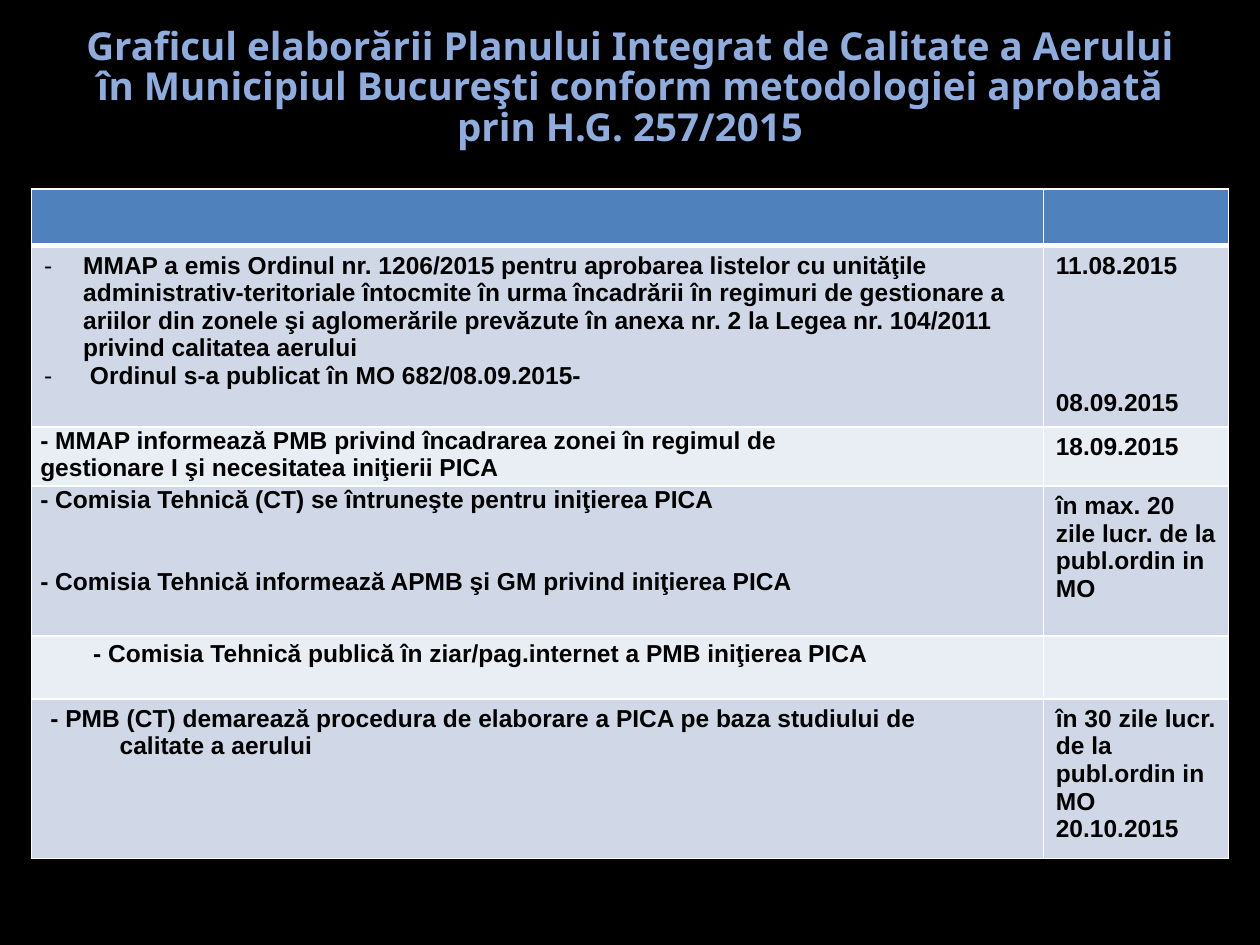
from dataclasses import dataclass

from lxml.etree import SubElement
from pptx import Presentation
from pptx.dml.color import RGBColor
from pptx.enum.text import MSO_ANCHOR, PP_ALIGN
from pptx.oxml.ns import qn
from pptx.util import Inches, Pt

BLACK = RGBColor(0x00, 0x00, 0x00)
WHITE = RGBColor(0xFF, 0xFF, 0xFF)
TITLE_BLUE = RGBColor(0x8F, 0xAC, 0xDE)
HEADER_BLUE = RGBColor(0x4F, 0x81, 0xBD)
BAND_DARK = RGBColor(0xD0, 0xD8, 0xE8)
BAND_LIGHT = RGBColor(0xE9, 0xED, 0xF4)

TITLE = ("Graficul elaborării Planului Integrat de Calitate a Aerului în Municipiul "
         "Bucureşti conform metodologiei aprobată prin H.G. 257/2015")
COLUMN_SHARES = (8.03 / 9.5, 1.47 / 9.5)


@dataclass
class Line:
    """One paragraph of a cell, with its indent in inches and gap in text lines."""
    text: str
    indent: float = 0
    gap: float = 0
    bullet: bool = False
    spacing: float = 1


@dataclass
class Step:
    """One row of the schedule."""
    height: float
    actions: tuple = ()
    deadline: tuple = ()
    tight: bool = False


SCHEDULE = (
    Step(0.45),
    Step(1.41,
         (Line("MMAP a emis Ordinul nr. 1206/2015 pentru aprobarea listelor cu unităţile "
               "administrativ-teritoriale întocmite în urma încadrării în regimuri de "
               "gestionare a ariilor din zonele şi aglomerările prevăzute în anexa nr. 2 "
               "la Legea nr. 104/2011 privind calitatea aerului", 0.31, bullet=True),
          Line(" Ordinul s-a publicat în MO 682/08.09.2015-", 0.31, bullet=True)),
         (Line("11.08.2015"), Line("08.09.2015", gap=4))),
    Step(0.44,
         (Line("- MMAP informează PMB privind încadrarea zonei în regimul de"),
          Line("gestionare I şi necesitatea iniţierii PICA")),
         (Line("18.09.2015"),), tight=True),
    Step(1.19,
         (Line("- Comisia Tehnică (CT) se întruneşte pentru iniţierea PICA"),
          Line("- Comisia Tehnică informează APMB şi GM privind iniţierea PICA", gap=2)),
         (Line("în max. 20 zile lucr. de la publ.ordin in MO"),), tight=True),
    Step(0.5,
         (Line("- Comisia Tehnică publică în ziar/pag.internet a PMB iniţierea PICA",
               0.42, spacing=1.15),), tight=True),
    Step(1.19,
         (Line("- PMB (CT) demarează procedura de elaborare a PICA pe baza studiului de", 0.05),
          Line("calitate a aerului", 0.6)),
         (Line("în 30 zile lucr. de la publ.ordin in MO 20.10.2015"),)),
)


class ScheduleSlide:
    """Holds the style and the current slide."""

    title_font, body_font = "Noto Sans", "Arial"
    title_size, body_size = 22, 14
    line_height = 15.7

    def __init__(self, deck):
        self.width, self.height = deck.slide_width, deck.slide_height
        self.slide = deck.slides.add_slide(deck.slide_layouts[6])
        backdrop = self.slide.background.fill
        backdrop.solid()
        backdrop.fore_color.rgb = BLACK

    def area(self, left, top, width, height):
        return (int(left * self.width), int(top * self.height),
                int(width * self.width), int(height * self.height))

    def style(self, paragraph, font, size, color):
        for run in paragraph.runs:
            run.font.name, run.font.size, run.font.bold = font, Pt(size), True
            run.font.color.rgb = color

    def title(self, text, *shares):
        frame = self.slide.shapes.add_textbox(*self.area(*shares)).text_frame
        frame.word_wrap = True
        frame.vertical_anchor = MSO_ANCHOR.MIDDLE
        frame.text = text
        heading = frame.paragraphs[0]
        heading.alignment = PP_ALIGN.CENTER
        heading.line_spacing = 0.88
        self.style(heading, self.title_font, self.title_size, TITLE_BLUE)

    def borders(self, cell, widths):
        properties = cell._tc.get_or_add_tcPr()
        for side, width in widths.items():
            edge = SubElement(properties, qn(f"a:ln{side}"), w=str(Pt(width)))
            paint = SubElement(edge, qn("a:solidFill"))
            SubElement(paint, qn("a:srgbClr"), val=str(WHITE))

    def paragraph(self, paragraph, line):
        paragraph.text = line.text
        paragraph.line_spacing = line.spacing
        paragraph.space_before = Pt(line.gap * self.line_height)
        properties = paragraph._p.get_or_add_pPr()
        properties.set("marL", str(Inches(line.indent)))
        properties.set("indent", str(Inches(-line.indent if line.bullet else 0)))
        if line.bullet:
            SubElement(properties, qn("a:buFont"), typeface=self.body_font)
            SubElement(properties, qn("a:buChar"), char="-")
        self.style(paragraph, self.body_font, self.body_size, BLACK)

    def cell(self, cell, lines, color, bottom):
        self.borders(cell, {"L": 1, "R": 1, "T": 1, "B": bottom})
        cell.fill.solid()
        cell.fill.fore_color.rgb = color
        frame = cell.text_frame
        for index, line in enumerate(lines):
            self.paragraph(frame.add_paragraph() if index else frame.paragraphs[0], line)

    def schedule(self, steps, left, top, width):
        total = sum(step.height for step in steps) / 7.5
        table = self.slide.shapes.add_table(
            len(steps), len(COLUMN_SHARES), *self.area(left, top, width, total)).table
        for column, share in zip(table.columns, COLUMN_SHARES):
            column.width = int(share * width * self.width)
        for number, step in enumerate(steps):
            table.rows[number].height = Inches(step.height)
            color = (BAND_DARK if number % 2 else BAND_LIGHT) if number else HEADER_BLUE
            for column, lines in enumerate((step.actions, step.deadline)):
                self.cell(table.cell(number, column), lines, color, 1 if number else 3)
            if step.tight:
                action = table.cell(number, 0)
                action.margin_left = action.margin_right = Inches(0.07)
                action.margin_top = action.margin_bottom = 0


def main():
    deck = Presentation()
    deck.slide_width, deck.slide_height = Inches(10), Inches(7.5)
    page = ScheduleSlide(deck)
    page.title(TITLE, 0.05, 0.08 / 7.5, 0.9, 1.25 / 7.5)
    page.schedule(SCHEDULE, 0.025, 0.2, 0.95)
    deck.save("out.pptx")


if __name__ == "__main__":
    main()
